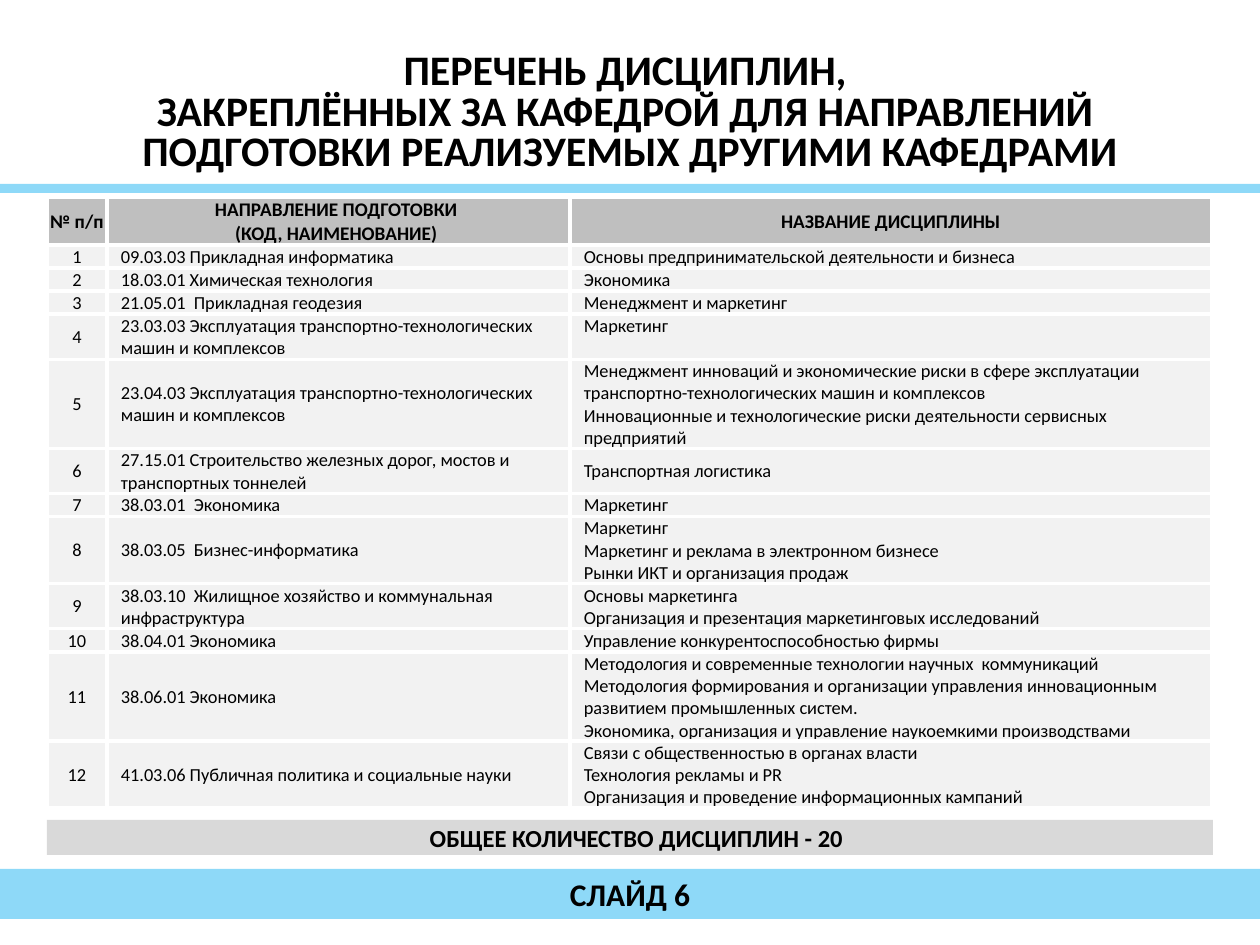
from dataclasses import dataclass

from lxml.etree import SubElement
from pptx import Presentation
from pptx.dml.color import RGBColor
from pptx.enum.shapes import MSO_SHAPE
from pptx.enum.text import MSO_ANCHOR, MSO_AUTO_SIZE, PP_ALIGN
from pptx.oxml.ns import qn
from pptx.util import Emu, Pt

PX_PER_INCH = 126
WIDTH, HEIGHT = 1260, 945


def px(n):
    return Emu(round(n * 914400 / PX_PER_INCH))


@dataclass(frozen=True)
class Theme:
    font: str = "Calibri"
    ink: str = "000000"
    band: str = "8ED9F8"
    head: str = "BFBFBF"
    row: str = "F2F2F2"
    total: str = "D9D9D9"
    border: str = "FFFFFF"
    border_pt: float = 2.25
    title_pt: float = 24
    footer_pt: float = 18
    total_pt: float = 14
    head_pt: float = 11
    body_pt: float = 10.5


def write(tf, text, theme, size, bold=False, align=PP_ALIGN.CENTER, indent=0, spacing=None):
    for i, line in enumerate(text.split("\n")):
        p = tf.paragraphs[0] if i == 0 else tf.add_paragraph()
        p.alignment = align
        if spacing:
            p.line_spacing = spacing
        if indent:
            pPr = p._p.get_or_add_pPr()
            pPr.set("marL", str(px(indent)))
            pPr.set("indent", "0")
        r = p.add_run()
        r.text = line
        r.font.name = theme.font
        r.font.size = Pt(size)
        r.font.bold = bold
        r.font.color.rgb = RGBColor.from_string(theme.ink)


class Painter:
    def __init__(self, slide, theme):
        self.s = slide
        self.theme = theme

    def bar(self, x, y, w, h, color):
        sp = self.s.shapes.add_shape(MSO_SHAPE.RECTANGLE, px(x), px(y), px(w), px(h))
        sp.shadow.inherit = False
        sp.fill.solid()
        sp.fill.fore_color.rgb = RGBColor.from_string(color)
        sp.line.fill.background()
        return sp

    def text(self, x, y, w, h, text, size, **fmt):
        tf = self.s.shapes.add_textbox(px(x), px(y), px(w), px(h)).text_frame
        tf.word_wrap = True
        tf.vertical_anchor = MSO_ANCHOR.MIDDLE
        write(tf, text, self.theme, size, **fmt)

    def total(self, x, y, w, h, text):
        tf = self.bar(x, y, w, h, self.theme.total).text_frame
        tf.word_wrap = True
        tf.auto_size = MSO_AUTO_SIZE.SHAPE_TO_FIT_TEXT
        tf.vertical_anchor = MSO_ANCHOR.TOP
        tf.margin_top = tf.margin_bottom = px(3)
        write(tf, text, self.theme, self.theme.total_pt, bold=True, indent=13)

    def cell(self, cell, text, color, size, **fmt):
        cell.margin_left = cell.margin_right = cell.margin_top = px(1)
        cell.margin_bottom = 0
        cell.vertical_anchor = MSO_ANCHOR.MIDDLE
        tcPr = cell._tc.get_or_add_tcPr()
        for side in ("a:lnL", "a:lnR", "a:lnT", "a:lnB"):
            ln = SubElement(tcPr, qn(side), w=str(Pt(self.theme.border_pt)))
            fill = SubElement(ln, qn("a:solidFill"))
            SubElement(fill, qn("a:srgbClr"), val=self.theme.border)
        cell.fill.solid()
        cell.fill.fore_color.rgb = RGBColor.from_string(color)
        write(cell.text_frame, text, self.theme, size, **fmt)

    def table(self, x, y, widths, heights, header, rows):
        t = self.theme
        frame = self.s.shapes.add_table(len(heights), len(widths), px(x), px(y),
                                        px(sum(widths)), px(sum(heights)))
        tbl = frame.table
        tbl.first_row = tbl.horz_banding = False
        for col, w in zip(tbl.columns, widths):
            col.width = px(w)
        for row, h in zip(tbl.rows, heights):
            row.height = px(h)
        for c, text in enumerate(header):
            self.cell(tbl.cell(0, c), text, t.head, t.head_pt, bold=True)
        for n, (_, program, courses) in enumerate(rows, 1):
            self.cell(tbl.cell(n, 0), str(n), t.row, t.body_pt)
            for c, text in enumerate((program, courses), 1):
                self.cell(tbl.cell(n, c), text, t.row, t.body_pt, align=PP_ALIGN.LEFT, indent=13)
        return tbl


TITLE = """ПЕРЕЧЕНЬ ДИСЦИПЛИН, 
ЗАКРЕПЛЁННЫХ ЗА КАФЕДРОЙ ДЛЯ НАПРАВЛЕНИЙ 
ПОДГОТОВКИ РЕАЛИЗУЕМЫХ ДРУГИМИ КАФЕДРАМИ"""

HEADER = ["№ п/п", "НАПРАВЛЕНИЕ ПОДГОТОВКИ \n(КОД, НАИМЕНОВАНИЕ) ", "НАЗВАНИЕ ДИСЦИПЛИНЫ"]

LINES_PROGRAM_COURSES = [
    (1, "09.03.03 Прикладная информатика", "Основы предпринимательской деятельности и бизнеса"),
    (1, "18.03.01 Химическая технология", "Экономика"),
    (1, "21.05.01  Прикладная геодезия", "Менеджмент и маркетинг"),
    (2, "23.03.03 Эксплуатация транспортно-технологических машин и комплексов", "Маркетинг"),
    (4, "23.04.03 Эксплуатация транспортно-технологических машин и комплексов",
     "Менеджмент инноваций и экономические риски в сфере эксплуатации "
     "транспортно-технологических машин и комплексов\n"
     "Инновационные и технологические риски деятельности сервисных предприятий"),
    (2, "27.15.01 Строительство железных дорог, мостов и транспортных тоннелей",
     "Транспортная логистика"),
    (1, "38.03.01  Экономика", "Маркетинг"),
    (3, "38.03.05  Бизнес-информатика",
     "Маркетинг\nМаркетинг и реклама в электронном бизнесе\nРынки ИКТ и организация продаж"),
    (2, "38.03.10  Жилищное хозяйство и коммунальная инфраструктура",
     "Основы маркетинга\nОрганизация и презентация маркетинговых исследований"),
    (1, "38.04.01 Экономика", "Управление конкурентоспособностью фирмы"),
    (4, "38.06.01 Экономика",
     "Методология и современные технологии научных  коммуникаций\n"
     "Методология формирования и организации управления инновационным "
     "развитием промышленных систем.\n"
     "Экономика, организация и управление наукоемкими производствами"),
    (3, "41.03.06 Публичная политика и социальные науки",
     "Связи с общественностью в органах власти\nТехнология рекламы и PR\n"
     "Организация и проведение информационных кампаний"),
]


def main():
    prs = Presentation()
    prs.slide_width, prs.slide_height = px(WIDTH), px(HEIGHT)
    theme = Theme()
    s = Painter(prs.slides.add_slide(prs.slide_layouts[6]), theme)

    s.text(0, 55, WIDTH, 118, TITLE, theme.title_pt, bold=True, spacing=0.8)
    s.bar(0, 184, WIDTH, 9, theme.band)

    line_height = 21
    heights = [48] + [line_height * lines for lines, _, _ in LINES_PROGRAM_COURSES]
    tbl = s.table(47, 197, [60, 463, 642], heights, HEADER, LINES_PROGRAM_COURSES)
    tbl.cell(4, 2).vertical_anchor = MSO_ANCHOR.TOP

    s.bar(0, 869, WIDTH, 50, theme.band)
    s.text(0, 869, WIDTH, 50, "СЛАЙД 6", theme.footer_pt, bold=True)
    s.total(47, 820, 1166, 35, "ОБЩЕЕ КОЛИЧЕСТВО ДИСЦИПЛИН - 20")
    prs.save("out.pptx")


if __name__ == "__main__":
    main()
